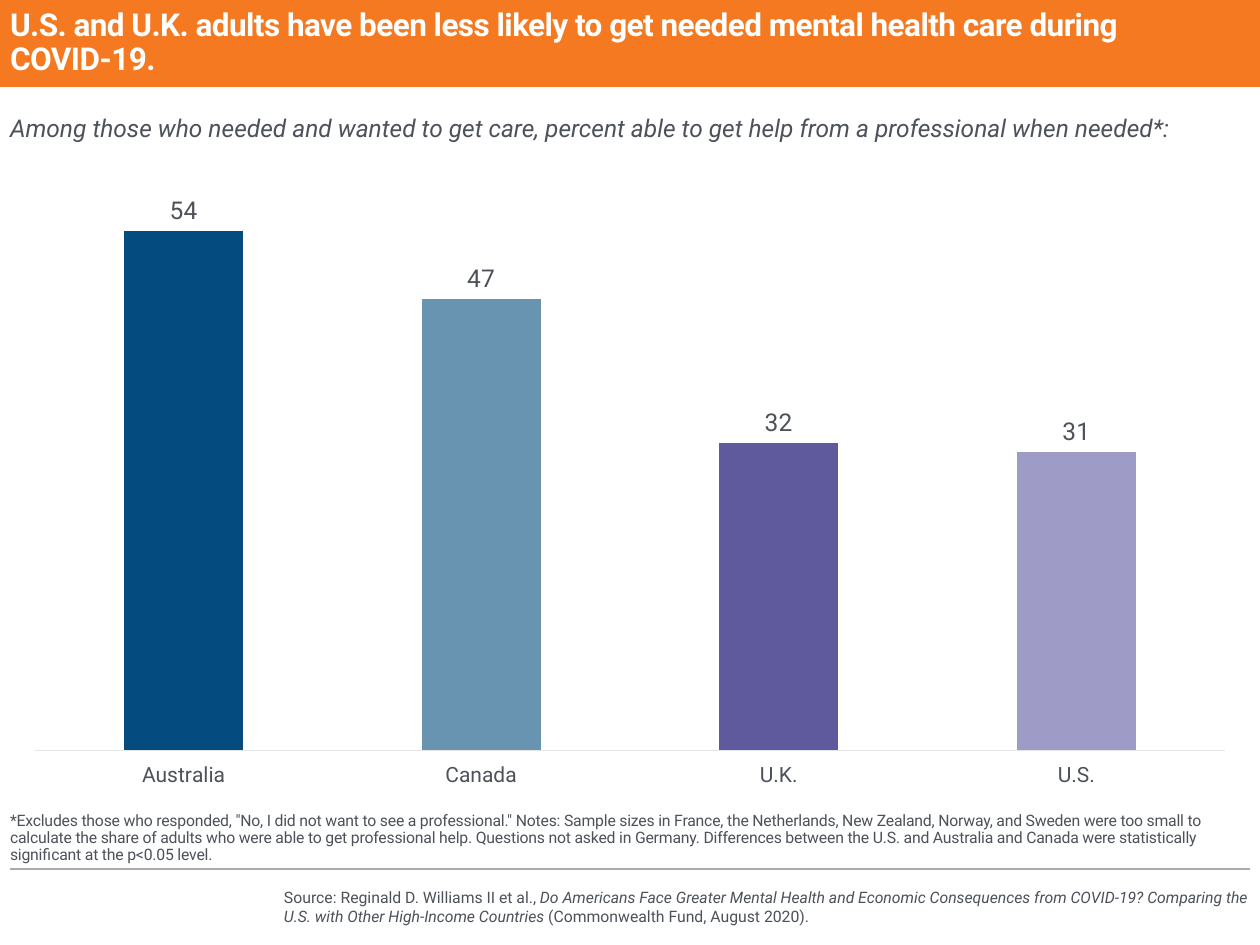
from dataclasses import dataclass

from pptx import Presentation
from pptx.chart.data import CategoryChartData
from pptx.dml.color import RGBColor
from pptx.enum.chart import XL_CHART_TYPE, XL_LABEL_POSITION, XL_TICK_LABEL_POSITION, XL_TICK_MARK
from pptx.enum.shapes import MSO_CONNECTOR, MSO_SHAPE
from pptx.enum.text import MSO_ANCHOR, MSO_AUTO_SIZE, PP_ALIGN
from pptx.oxml import parse_xml
from pptx.oxml.ns import nsdecls, qn
from pptx.util import Emu, Pt

SCALE = 914400 / 126


@dataclass(frozen=True)
class Theme:
    """Colours, font and type sizes of the slide."""
    font: str = "Roboto"
    text: str = "4C515A"
    band: str = "F47920"
    white: str = "FFFFFF"
    rule: str = "ABABAB"
    axis: str = "E3E5E7"
    title_size: int = 18
    body_size: int = 14
    axis_size: int = 12
    note_size: int = 9


@dataclass(frozen=True)
class Box:
    """A rectangle in px."""
    left: int
    top: int
    width: int
    height: int

    def emu(self) -> tuple:
        """Return the rectangle in EMU."""
        return tuple(px(value) for value in (self.left, self.top, self.width, self.height))


@dataclass(frozen=True)
class TextStyle:
    """Formatting shared by all the runs of a text block."""
    size: int
    color: str
    anchor: MSO_ANCHOR = MSO_ANCHOR.TOP
    bold: bool = False
    line_spacing: float = 1.0
    tracking: int = 0


@dataclass(frozen=True)
class Phrase:
    """A piece of text, upright or italic."""
    text: str
    italic: bool = False


@dataclass(frozen=True)
class Bar:
    """A country with its percentage and bar colour."""
    country: str
    percent: int
    color: str


THEME = Theme()
BARS = [
    Bar("Australia", 54, "044C7F"),
    Bar("Canada", 47, "6894B2"),
    Bar("U.K.", 32, "5F5A9D"),
    Bar("U.S.", 31, "9E9BC6"),
]
TITLE = "U.S. and U.K. adults have been less likely to get needed mental health care during COVID-19."
SUBTITLE = (
    "Among those who needed and wanted to get care, percent able to get help "
    "from a professional when needed*:"
)
NOTE = (
    '*Excludes those who responded, "No, I did not want to see a professional." '
    "Notes: Sample sizes in France, the Netherlands, New Zealand, Norway, and Sweden "
    "were too small to calculate the share of adults who were able to get professional help. "
    "Questions not asked in Germany. Differences between the U.S. and Australia and Canada "
    "were statistically significant at the p<0.05 level."
)
SOURCE = [
    Phrase("Source: Reginald D. Williams II et al., "),
    Phrase(
        "Do Americans Face Greater Mental Health and Economic Consequences from COVID-19? "
        "Comparing the U.S. with Other High-Income Countries ",
        italic=True,
    ),
    Phrase("(Commonwealth Fund, August 2020)."),
]


def px(value: int) -> Emu:
    """Turn px into EMU."""
    return Emu(round(value * SCALE))


def set_font(font, size: int, color: str) -> None:
    """Apply the theme font with a size and colour."""
    font.name = THEME.font
    font.size = Pt(size)
    font.color.rgb = RGBColor.from_string(color)


def write_text(shape, box: Box, phrases: list[Phrase], style: TextStyle) -> None:
    """Place a text shape and fill it with one formatted paragraph."""
    shape.left, shape.top, shape.width, shape.height = box.emu()
    frame = shape.text_frame
    frame.word_wrap = True
    frame.auto_size = MSO_AUTO_SIZE.NONE
    frame.vertical_anchor = style.anchor
    frame.margin_left = frame.margin_top = frame.margin_right = frame.margin_bottom = 0
    paragraph = frame.paragraphs[0]
    paragraph.alignment = PP_ALIGN.LEFT
    paragraph.line_spacing = style.line_spacing
    paragraph.space_before = Pt(0)
    set_font(paragraph.font, style.size, style.color)
    paragraph.font.bold = style.bold
    for phrase in phrases:
        run = paragraph.add_run()
        run.text = phrase.text
        run.font.italic = phrase.italic
        if style.tracking:
            run._r.get_or_add_rPr().set("spc", str(style.tracking))


def add_text(slide, box: Box, phrases: list[Phrase], style: TextStyle) -> None:
    """Add a text box."""
    write_text(slide.shapes.add_textbox(*box.emu()), box, phrases, style)


def add_title(slide) -> None:
    """Draw the coloured band behind the title and write the title."""
    band = slide.shapes.add_shape(MSO_SHAPE.RECTANGLE, *Box(0, 0, 1260, 87).emu())
    band.shadow.inherit = False
    band.fill.solid()
    band.fill.fore_color.rgb = RGBColor.from_string(THEME.band)
    band.line.fill.background()
    title = slide.shapes.title
    title._element.addprevious(band._element)
    style = TextStyle(THEME.title_size, THEME.white, MSO_ANCHOR.MIDDLE, True, 0.9, -30)
    write_text(title, Box(10, 0, 1240, 87), [Phrase(TITLE)], style)


def add_rule(slide) -> None:
    """Draw the thin rule above the source."""
    rule = slide.shapes.add_connector(MSO_CONNECTOR.STRAIGHT, px(1250), px(869), px(10), px(869))
    rule.line.color.rgb = RGBColor.from_string(THEME.rule)
    rule.line.width = Pt(0.75)
    rule._element.spPr.append(parse_xml(f"<a:effectLst {nsdecls('a')}/>"))


def set_plot_area(chart) -> None:
    """Fix the inner plot area as fractions of the chart."""
    plot_area = chart._chartSpace.chart.plotArea
    for layout in plot_area.findall(qn("c:layout")):
        plot_area.remove(layout)
    plot_area.insert(0, parse_xml(
        f"<c:layout {nsdecls('c')}><c:manualLayout><c:layoutTarget val='inner'/>"
        "<c:xMode val='edge'/><c:yMode val='edge'/><c:x val='0.02'/><c:y val='0.02'/>"
        "<c:w val='0.96'/><c:h val='0.91'/></c:manualLayout></c:layout>"
    ))


def add_bar_chart(slide, box: Box) -> None:
    """Add the column chart with one colour per country."""
    data = CategoryChartData()
    data.categories = [bar.country for bar in BARS]
    data.add_series("Series 1", [bar.percent for bar in BARS])
    chart = slide.shapes.add_chart(XL_CHART_TYPE.COLUMN_CLUSTERED, *box.emu(), data).chart
    chart.has_legend = chart.has_title = False
    set_font(chart.font, THEME.body_size, THEME.text)
    set_plot_area(chart)

    values = chart.value_axis
    values.minimum_scale, values.maximum_scale = 0, 60
    values.has_major_gridlines = False
    values.visible = False
    countries = chart.category_axis
    countries.major_tick_mark = countries.minor_tick_mark = XL_TICK_MARK.NONE
    countries.tick_label_position = XL_TICK_LABEL_POSITION.LOW
    countries.format.line.color.rgb = RGBColor.from_string(THEME.axis)
    countries.format.line.width = Pt(0.75)
    set_font(countries.tick_labels.font, THEME.axis_size, THEME.text)

    plot = chart.plots[0]
    plot.gap_width = 150
    plot.vary_by_categories = False
    series = plot.series[0]
    for index, bar in enumerate(BARS):
        fill = series.points[index].format.fill
        fill.solid()
        fill.fore_color.rgb = RGBColor.from_string(bar.color)
    labels = series.data_labels
    labels.show_value = True
    labels.position = XL_LABEL_POSITION.OUTSIDE_END
    set_font(labels.font, THEME.body_size, THEME.text)


def main() -> None:
    """Build the slide and save it."""
    presentation = Presentation()
    presentation.slide_width, presentation.slide_height = px(1260), px(945)
    slide = presentation.slides.add_slide(presentation.slide_layouts[5])
    add_title(slide)
    add_rule(slide)
    add_text(slide, Box(284, 888, 966, 38), SOURCE,
             TextStyle(THEME.note_size, THEME.text, MSO_ANCHOR.MIDDLE))
    add_bar_chart(slide, Box(10, 161, 1240, 634))
    add_text(slide, Box(10, 796, 1240, 68), [Phrase(NOTE)],
             TextStyle(THEME.note_size, THEME.text, MSO_ANCHOR.BOTTOM, line_spacing=0.9, tracking=-10))
    add_text(slide, Box(10, 113, 1216, 30), [Phrase(SUBTITLE, italic=True)],
             TextStyle(THEME.body_size, THEME.text))
    presentation.save("out.pptx")


if __name__ == "__main__":
    main()
